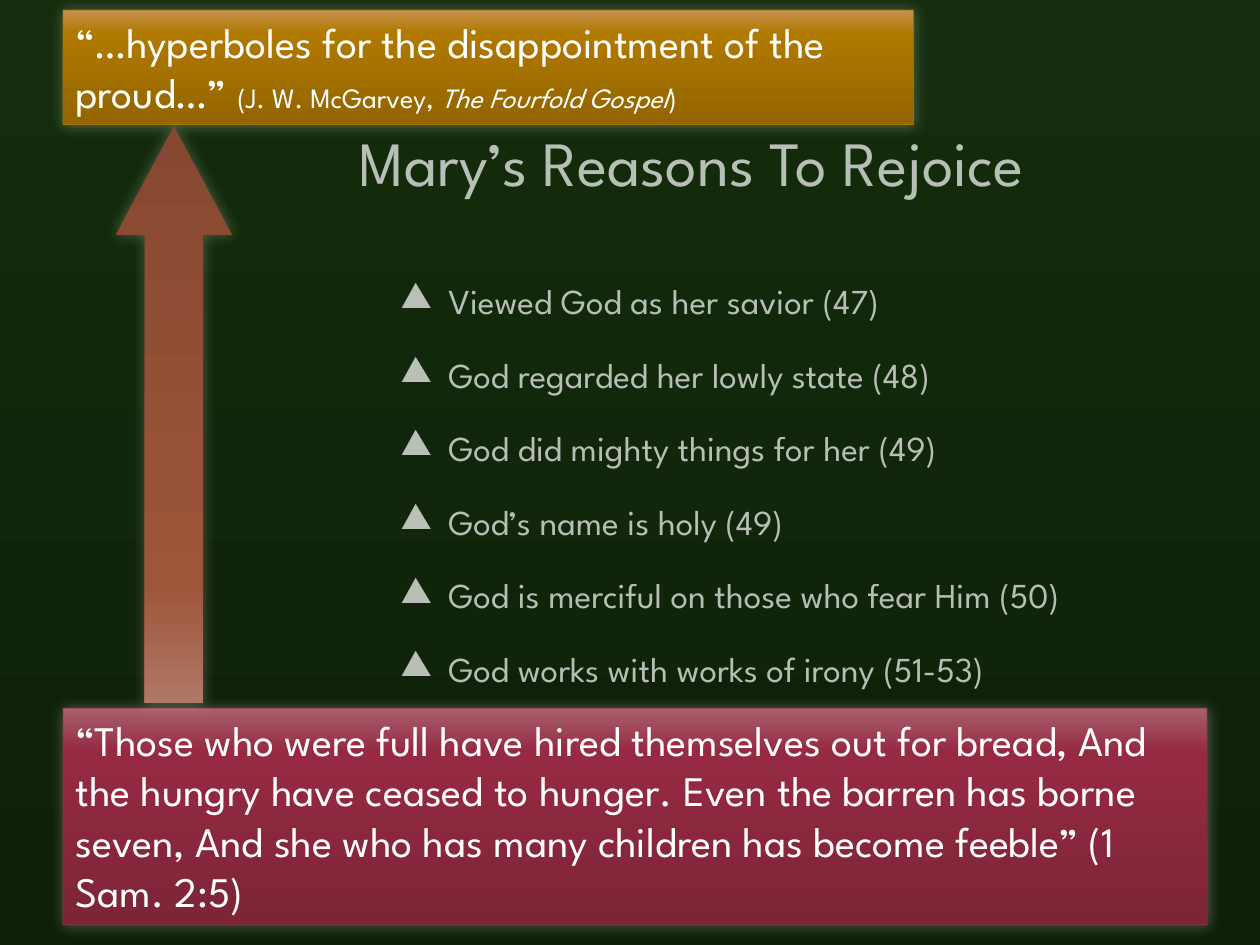
from dataclasses import dataclass

import lxml.etree
import pptx
import pptx.dml.color
import pptx.enum.shapes
import pptx.enum.text
import pptx.oxml
import pptx.oxml.ns
import pptx.util

Inches = pptx.util.Inches
Pt = pptx.util.Pt
qn = pptx.oxml.ns.qn
RGBColor = pptx.dml.color.RGBColor
Anchor = pptx.enum.text.MSO_ANCHOR
Align = pptx.enum.text.PP_ALIGN
ShapeKind = pptx.enum.shapes.MSO_SHAPE

Stops = tuple[tuple[int, str, int], ...]  # position %, colour, opacity %
Box = tuple[float, float, float, float]  # left, top, width, height in inches


def three_stops(dark: str, middle: str, light: str) -> Stops:
    return (0, dark, 100), (80, middle, 100), (100, light, 100)


@dataclass(frozen=True)
class Theme:
    font: str = "League Spartan"
    title_size: int = 36
    quote_size: int = 24
    list_size: int = 20
    source_size: int = 16
    white: str = "FFFFFF"
    background: Stops = ((0, "142D0C", 100), (100, "0E1F08", 100))
    faded_text: Stops = ((0, "FFFFFF", 100), (86, "FFFFFF", 70), (99, "FFFFFF", 85))
    crimson: Stops = three_stops("7D2437", "962A42", "A8606C")
    crimson_line: str = "8D384A"
    gold: Stops = three_stops("936500", "B07900", "C6914F")
    gold_line: str = "AC7908"
    rust: Stops = three_stops("854830", "9E563A", "B07867")


THEME = Theme()


@dataclass(frozen=True)
class Phrase:
    text: str
    size: int = THEME.quote_size
    italic: bool = False


@dataclass(frozen=True)
class QuoteBox:
    box: Box
    fill: Stops
    line: str
    phrases: tuple[Phrase, ...]


REASONS = (
    "Viewed God as her savior (47)",
    "God regarded her lowly state (48)",
    "God did mighty things for her (49)",
    "God’s name is holy (49)",
    "God is merciful on those who fear Him (50)",
    "God works with works of irony (51-53)",
)

QUOTES = (
    QuoteBox((0.5, 5.62, 9.08, 1.72), THEME.crimson, THEME.crimson_line, (
        Phrase("“Those who were full have hired themselves out for bread, "
               "And the hungry have ceased to hunger. Even the barren has borne seven, "
               "And she who has many children has become feeble” (1 Sam. 2:5)"),
    )),
    QuoteBox((0.5, 0.08, 6.75, 0.91), THEME.gold, THEME.gold_line, (
        Phrase("“…hyperboles for the disappointment of the proud…” "),
        Phrase("(J. W. McGarvey, ", THEME.source_size),
        Phrase("The Fourfold Gospel", THEME.source_size, True),
        Phrase(")", THEME.source_size),
    )),
)


def set_gradient(fill, parent, stops: Stops, angle: int) -> None:
    """Swap a solid fill inside parent for a linear gradient."""
    fill.solid()
    gradient = lxml.etree.Element(qn("a:gradFill"), rotWithShape="1")
    stop_list = lxml.etree.SubElement(gradient, qn("a:gsLst"))
    for position, color, opacity in stops:
        stop = lxml.etree.SubElement(stop_list, qn("a:gs"), pos=str(position * 1000))
        value = lxml.etree.SubElement(stop, qn("a:srgbClr"), val=color)
        if opacity < 100:
            lxml.etree.SubElement(value, qn("a:alpha"), val=str(opacity * 1000))
    lxml.etree.SubElement(gradient, qn("a:lin"), ang=str(angle * 60000), scaled="0")
    parent.replace(parent.find(qn("a:solidFill")), gradient)


def add_halo(shape) -> None:
    """Give the shape a soft white shadow on all sides."""
    shape.shadow.inherit = False
    effects = shape.element.spPr.find(qn("a:effectLst"))
    shadow = lxml.etree.SubElement(effects, qn("a:outerShdw"), blurRad=str(Pt(8)),
                                   dist="0", dir="0", algn="ctr", rotWithShape="0")
    color = lxml.etree.SubElement(shadow, qn("a:srgbClr"), val=THEME.white)
    lxml.etree.SubElement(color, qn("a:alpha"), val="25000")


def add_glowing_shape(slide, kind, box: Box, stops: Stops):
    shape = slide.shapes.add_shape(kind, *map(Inches, box))
    set_gradient(shape.fill, shape.element.spPr, stops, 270)
    shape.line.fill.background()
    add_halo(shape)
    return shape


def add_faded_text(slide, box: Box, lines: tuple[str, ...], size: int, anchor):
    text_box = slide.shapes.add_textbox(*map(Inches, box))
    text_frame = text_box.text_frame
    text_frame.word_wrap = True
    text_frame.vertical_anchor = anchor
    text_frame.text = "\n".join(lines)
    for paragraph in text_frame.paragraphs:
        font = paragraph.runs[0].font
        font.name, font.size = THEME.font, Pt(size)
        set_gradient(font.fill, paragraph.runs[0].font._element, THEME.faded_text, 90)
    return text_frame


def add_bullet(paragraph) -> None:
    paragraph.space_before = Pt(18)
    properties = paragraph._p.get_or_add_pPr()
    properties.set("marL", str(Inches(0.38)))
    properties.set("indent", str(-Inches(0.38)))
    lxml.etree.SubElement(properties, qn("a:buChar"), char="▲")


def add_quote(slide, quote: QuoteBox) -> None:
    shape = add_glowing_shape(slide, ShapeKind.RECTANGLE, quote.box, quote.fill)
    shape.line.color.rgb = RGBColor.from_string(quote.line)
    shape.line.width = Pt(0.5)
    line_color = shape.line._ln.find(qn("a:solidFill"))[0]
    lxml.etree.SubElement(line_color, qn("a:alpha"), val="80000")

    text_frame = shape.text_frame
    text_frame.word_wrap = True
    text_frame.auto_size = pptx.enum.text.MSO_AUTO_SIZE.SHAPE_TO_FIT_TEXT
    text_frame.vertical_anchor = Anchor.TOP
    paragraph = text_frame.paragraphs[0]
    paragraph.alignment = Align.LEFT
    for phrase in quote.phrases:
        run = paragraph.add_run()
        run.text = phrase.text
        run.font.name, run.font.size = THEME.font, Pt(phrase.size)
        run.font.italic = phrase.italic
        run.font.color.rgb = RGBColor.from_string(THEME.white)


def main() -> None:
    presentation = pptx.Presentation()
    presentation.slide_width, presentation.slide_height = Inches(10), Inches(7.5)
    slide = presentation.slides.add_slide(presentation.slide_layouts[6])

    # Background
    background_fill = slide.background.fill
    background_fill.solid()
    properties = slide.element.find(".//" + qn("p:bgPr"))
    set_gradient(background_fill, properties, THEME.background, 90)

    # Title and list of reasons
    add_faded_text(slide, (2.75, 0.38, 6.75, 1.25), ("Mary’s Reasons To Rejoice",),
                   THEME.title_size, Anchor.BOTTOM)
    reasons = add_faded_text(slide, (3.08, 2.17, 6.42, 3.67), REASONS,
                             THEME.list_size, Anchor.TOP)
    for paragraph in reasons.paragraphs:
        add_bullet(paragraph)

    # Quotations, and the arrow from the lower to the upper one
    for quote in QUOTES:
        add_quote(slide, quote)
    arrow = add_glowing_shape(slide, ShapeKind.DOWN_ARROW, (0.92, 1, 0.92, 4.58), THEME.rust)
    arrow.rotation = 180
    arrow.adjustments[0], arrow.adjustments[1] = 0.5, 0.94

    presentation.save("out.pptx")


if __name__ == "__main__":
    main()
